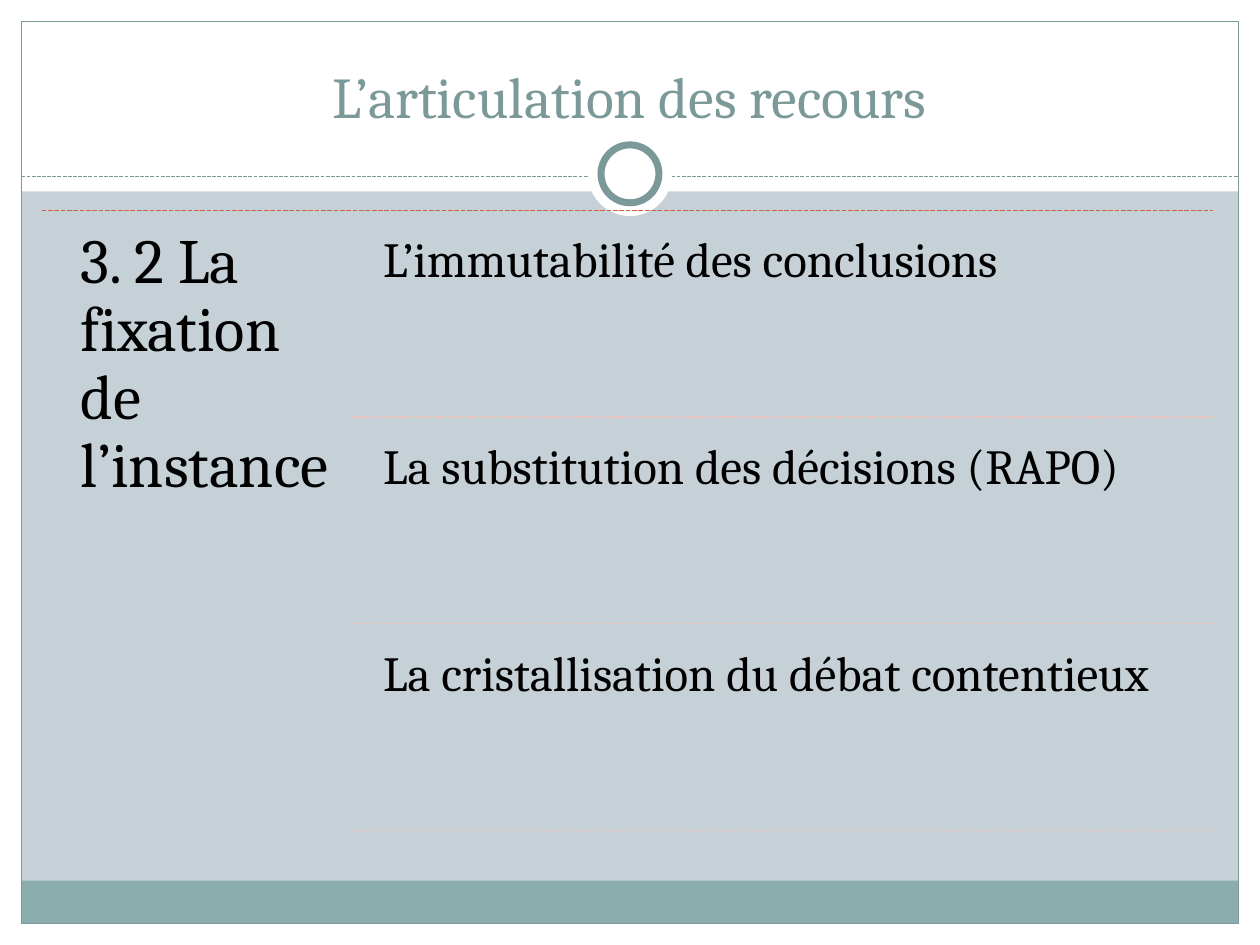
from dataclasses import dataclass

from pptx import Presentation
from pptx.dml.color import RGBColor
from pptx.enum.dml import MSO_LINE
from pptx.enum.shapes import MSO_CONNECTOR, MSO_SHAPE
from pptx.enum.text import MSO_ANCHOR, MSO_AUTO_SIZE, PP_ALIGN
from pptx.oxml.ns import qn
from pptx.util import Inches, Pt


@dataclass(frozen=True)
class Theme:
    """Colours, font and type sizes of the slide."""
    back: str = "C5D1D7"
    white: str = "FFFFFF"
    band: str = "8CADAE"
    edge: str = "7C999A"
    accent: str = "D16349"
    pale: str = "E9C6C1"
    ink: str = "000000"
    font: str = "Cambria"
    title: int = 33
    head: int = 36
    item: int = 28


THEME = Theme()
HEAD = "3. 2 La fixation de l’instance"
ITEMS = [
    "L’immutabilité des conclusions",
    "La substitution des décisions (RAPO)",
    "La cristallisation du débat contentieux",
]


def rgb(tone):
    """Turn a hex string into a colour."""
    return RGBColor.from_string(tone)


def add_form(slide, kind, box, fill=None, line=None, width=0.75):
    """Add a flat shape with optional fill and outline."""
    form = slide.shapes.add_shape(kind, *map(Inches, box))
    form.shadow.inherit = False
    if fill:
        form.fill.solid()
        form.fill.fore_color.rgb = rgb(fill)
    else:
        form.fill.background()
    if line:
        form.line.color.rgb = rgb(line)
        form.line.width = Pt(width)
    else:
        form.line.fill.background()


def add_rule(slide, left, right, top, tone, width=0.9):
    """Add a level dashed line."""
    ends = map(Inches, (left, top, right, top))
    rule = slide.shapes.add_connector(MSO_CONNECTOR.STRAIGHT, *ends)
    rule.line.color.rgb = rgb(tone)
    rule.line.width = Pt(width)
    rule.line.dash_style = MSO_LINE.SQUARE_DOT
    props = rule.element.spPr
    props.append(props.makeelement(qn("a:effectLst"), {}))


def set_text(frame, text, size, tone):
    """Write one paragraph in the theme font."""
    frame.text = text
    frame.word_wrap = True
    frame.auto_size = MSO_AUTO_SIZE.NONE
    font = frame.paragraphs[0].runs[0].font
    font.name = THEME.font
    font.size = Pt(size)
    font.color.rgb = rgb(tone)


def add_text(slide, box, text, size, inset):
    """Add a text box with equal insets."""
    frame = slide.shapes.add_textbox(*map(Inches, box)).text_frame
    set_text(frame, text, size, THEME.ink)
    frame.margin_left = frame.margin_right = Inches(inset)
    frame.margin_top = frame.margin_bottom = Inches(inset)
    frame.paragraphs[0].line_spacing = 0.9


def draw_frame(slide, box):
    """Draw the white margins, footer band, border and ring."""
    left, top, width, height = box
    gap, crown, foot, rule = 0.17, 1.52, 0.34, 1.4
    right, base = left + width, top + height
    inner = width - 2 * gap
    rect, oval = MSO_SHAPE.RECTANGLE, MSO_SHAPE.OVAL
    for part in (
        (left, base - gap, width, gap),
        (left, top, width, crown),
        (left, top, gap, height),
        (right - gap, top, gap, height),
    ):
        add_form(slide, rect, part, THEME.white)
    band = (left + gap, base - gap - foot, inner, foot)
    add_form(slide, rect, band, THEME.band)
    border = (left + gap, top + gap, inner, height - 2 * gap)
    add_form(slide, rect, border, line=THEME.edge)
    add_rule(slide, left + gap, right - gap, top + rule, THEME.edge, 0.75)
    mid, axis = left + width / 2, top + 1.38
    for size, line in ((0.67, None), (0.46, THEME.edge)):
        ring = (mid - size / 2, axis - size / 2, size, size)
        add_form(slide, oval, ring, THEME.white, line, 4)


def place_title(slide, box, text):
    """Place the title above the frame."""
    title = slide.shapes.title
    slide.shapes.element.append(title.element)
    title.left, title.top, title.width, title.height = map(Inches, box)
    frame = title.text_frame
    set_text(frame, text, THEME.title, THEME.edge)
    frame.vertical_anchor = MSO_ANCHOR.BOTTOM
    frame.paragraphs[0].alignment = PP_ALIGN.CENTER


def draw_list(slide, box, head, items):
    """Draw the heading on the left and the ruled items on the right."""
    left, top, width, height = box
    right = left + width
    add_rule(slide, left, right, top, THEME.accent)
    add_text(slide, (left + 0.16, top, 2.46, height), head, THEME.head, 0.15)
    start, gap, tall = left + 2.59, 0.08, 1.56
    for row, item in enumerate(items):
        y = top + gap + row * (tall + gap)
        add_text(slide, (start, y, right - start, tall), item, THEME.item, 0.12)
        add_rule(slide, start - 0.13, right, y + tall, THEME.pale)


def main():
    """Build and save the slide."""
    deck = Presentation()
    deck.slide_width, deck.slide_height = Inches(10), Inches(7.5)
    slide = deck.slides.add_slide(deck.slide_layouts[5])
    slide.background.fill.solid()
    slide.background.fill.fore_color.rgb = rgb(THEME.back)
    draw_frame(slide, (0, 0, 10, 7.5))
    place_title(slide, (0.33, 0.25, 9.33, 0.83), "L’articulation des recours")
    draw_list(slide, (0.33, 1.67, 9.3, 5), HEAD, ITEMS)
    deck.save("out.pptx")


if __name__ == "__main__":
    main()
